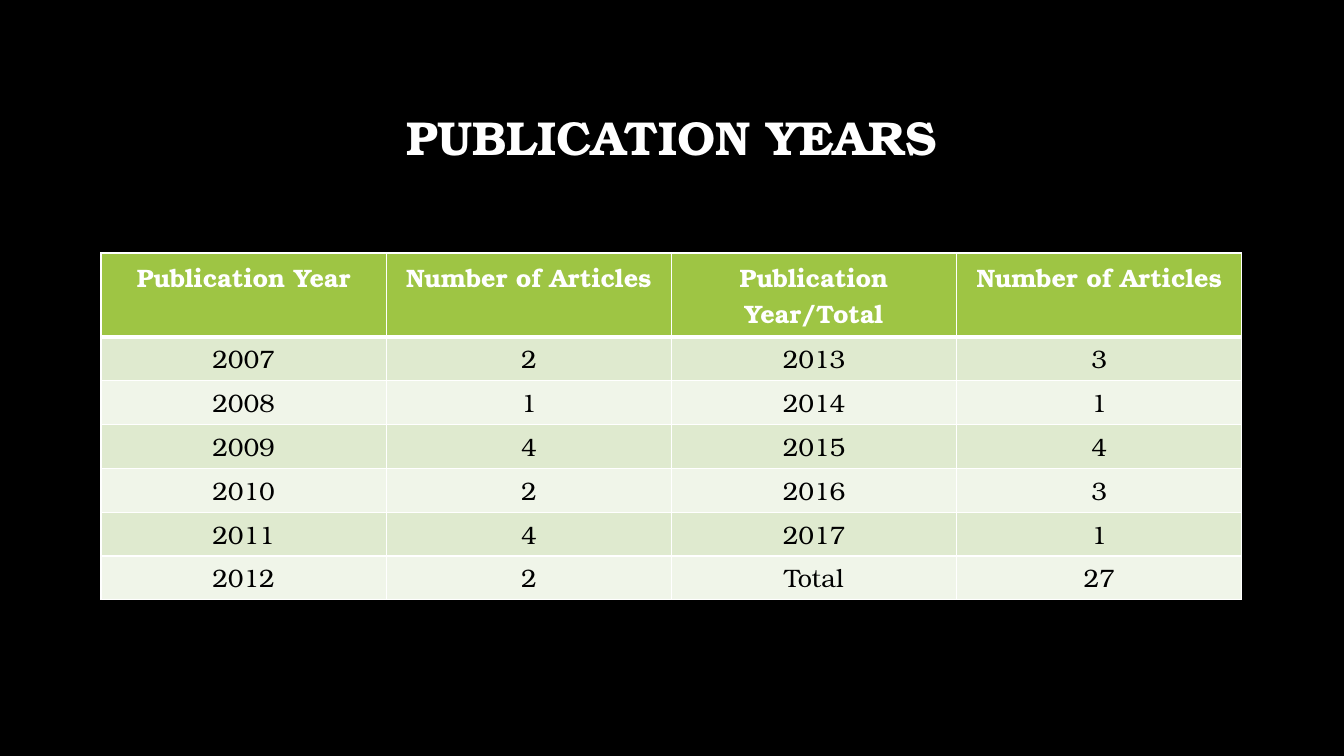
from lxml.etree import SubElement
from pptx import Presentation
from pptx.dml.color import RGBColor as RGB
from pptx.enum.text import MSO_ANCHOR as ANCHOR, PP_ALIGN as ALIGN
from pptx.oxml.ns import qn
from pptx.util import Emu, Pt

PX = 914400 / 100.8
FONT = "TeX Gyre Bonum"
HEADER_HEIGHT = 84
COLORS = {
    "black": "000000",
    "white": "FFFFFF",
    "header": "9EC544",
    "odd": "DFEACF",
    "even": "F0F5E9",
}
FORMATS = {
    "title": {"size": Pt(34), "bold": True, "name": FONT},
    "header": {"size": Pt(18), "bold": True, "name": FONT},
    "body": {"size": Pt(18), "bold": False, "name": FONT},
}
ROWS = [
    ("Publication Year", "Number of Articles", "Publication Year/Total", "Number of Articles"),
    ("2007", "2", "2013", "3"),
    ("2008", "1", "2014", "1"),
    ("2009", "4", "2015", "4"),
    ("2010", "2", "2016", "3"),
    ("2011", "4", "2017", "1"),
    ("2012", "2", "Total", "27"),
]


def px(n):
    """Turn pixels into EMU."""
    return Emu(round(n * PX))


def color(name):
    """Look up a named colour."""
    return RGB.from_string(COLORS[name])


def write(tf, text, style, ink):
    """Write one centred paragraph in a text frame."""
    p = tf.paragraphs[0]
    p.alignment = ALIGN.CENTER
    r = p.add_run()
    r.text = text
    for key, value in FORMATS[style].items():
        setattr(r.font, key, value)
    r.font.color.rgb = color(ink)
    return p


def add_title(s, text, box):
    """Add the slide heading."""
    tf = s.shapes.add_textbox(*map(px, box)).text_frame
    tf.word_wrap = True
    tf.vertical_anchor = ANCHOR.MIDDLE
    write(tf, text, "title", "white").line_spacing = 0.9


def set_borders(cell, widths):
    """Draw white cell borders from a dict of sides and point widths."""
    tc_pr = cell._tc.get_or_add_tcPr()
    for i, (side, width) in enumerate(widths.items()):
        ln = SubElement(tc_pr, qn(f"a:{side}"), w=str(Pt(width)))
        fill = SubElement(ln, qn("a:solidFill"))
        SubElement(fill, qn("a:srgbClr"), val=COLORS["white"])
        tc_pr.insert(i, ln)


def add_table(s, rows, box):
    """Add a table with a tall header row and alternating row fills."""
    left, top, width, height = box
    n_rows, n_cols = len(rows), len(rows[0])
    body_height = (height - HEADER_HEIGHT) / (n_rows - 1)
    table = s.shapes.add_table(n_rows, n_cols, *map(px, box)).table
    for col in table.columns:
        col.width = px(width / n_cols)
    for i, values in enumerate(rows):
        table.rows[i].height = px(body_height if i else HEADER_HEIGHT)
        style, ink = ("body", "black") if i else ("header", "white")
        fill = ("even", "odd")[i % 2] if i else "header"
        borders = {
            "lnL": 1,
            "lnR": 1,
            "lnT": 3 if i == 1 else 1,
            "lnB": 1 if i else 3,
        }
        for j, text in enumerate(values):
            cell = table.cell(i, j)
            cell.fill.solid()
            cell.fill.fore_color.rgb = color(fill)
            set_borders(cell, borders)
            write(cell.text_frame, text, style, ink)


def main():
    """Build and save the slide."""
    prs = Presentation()
    prs.slide_width, prs.slide_height = px(1344), px(756)
    s = prs.slides.add_slide(prs.slide_layouts[6])
    s.background.fill.solid()
    s.background.fill.fore_color.rgb = color("black")
    add_title(s, "PUBLICATION YEARS", (101, 67, 1141, 146))
    add_table(s, ROWS, (101, 253, 1141, 347))
    prs.save("out.pptx")


if __name__ == "__main__":
    main()
